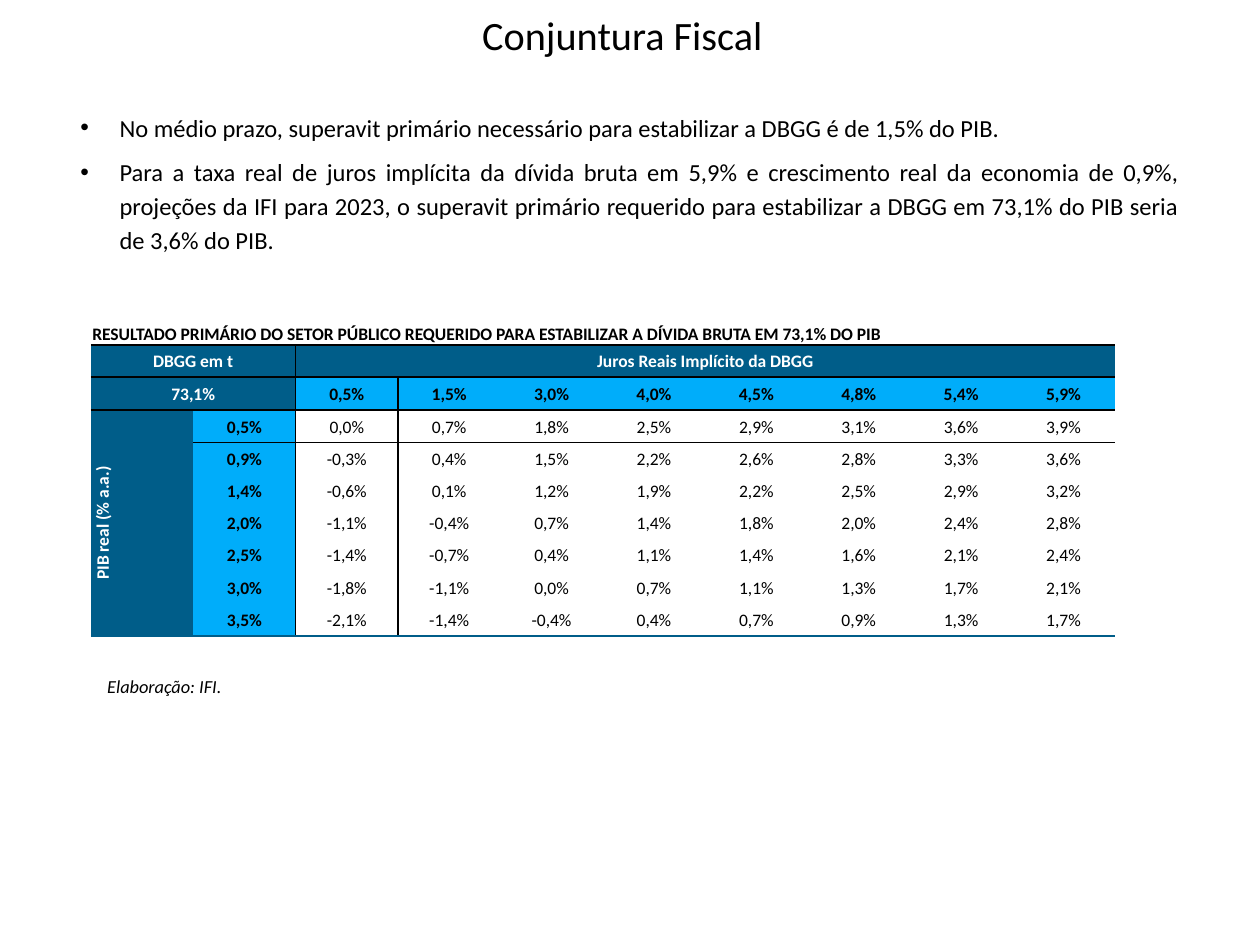
from lxml.etree import SubElement
from pptx import Presentation
from pptx.dml.color import RGBColor
from pptx.enum.text import MSO_ANCHOR, MSO_AUTO_SIZE, PP_ALIGN
from pptx.oxml.ns import qn
from pptx.util import Cm, Pt

BLACK, WHITE, NAVY, SKY = "000000", "FFFFFF", "005D89", "00ADFA"
NO_GRID_STYLE = "{2D5ABB26-0587-4C30-8999-92F81FD0307C}"
BULLETS = [
    "No médio prazo, superavit primário necessário para estabilizar a DBGG é de 1,5% do PIB.",
    "Para a taxa real de juros implícita da dívida bruta em 5,9% e crescimento real da economia "
    "de 0,9%, projeções da IFI para 2023, o superavit primário requerido para estabilizar a DBGG "
    "em 73,1% do PIB seria de 3,6% do PIB.",
]
TABLE_TITLE = (
    "RESULTADO PRIMÁRIO DO SETOR PÚBLICO REQUERIDO PARA ESTABILIZAR A DÍVIDA BRUTA EM 73,1% DO PIB"
)
INTEREST_RATES = "0,5% 1,5% 3,0% 4,0% 4,5% 4,8% 5,4% 5,9%".split()
PRIMARY_RESULTS = {
    "0,5%": "0,0% 0,7% 1,8% 2,5% 2,9% 3,1% 3,6% 3,9%",
    "0,9%": "-0,3% 0,4% 1,5% 2,2% 2,6% 2,8% 3,3% 3,6%",
    "1,4%": "-0,6% 0,1% 1,2% 1,9% 2,2% 2,5% 2,9% 3,2%",
    "2,0%": "-1,1% -0,4% 0,7% 1,4% 1,8% 2,0% 2,4% 2,8%",
    "2,5%": "-1,4% -0,7% 0,4% 1,1% 1,4% 1,6% 2,1% 2,4%",
    "3,0%": "-1,8% -1,1% 0,0% 0,7% 1,1% 1,3% 1,7% 2,1%",
    "3,5%": "-2,1% -1,4% -0,4% 0,4% 0,7% 0,9% 1,3% 1,7%",
}
ROW_HEIGHTS = [0.69, 0.64, 0.67] + [0.65] * 7 + [0.69]
MERGES = [(0, 0, 0, 9), (1, 0, 1, 1), (1, 2, 1, 9), (2, 0, 2, 1), (3, 0, 9, 0)]
RULES_BELOW = {0: (BLACK, 1), 2: (BLACK, 1), 9: (NAVY, 1.5)}


def color(value):
    """Turn a hex string into a colour."""
    return RGBColor.from_string(value)


def apply(target, values):
    """Set every attribute in a dict of format values."""
    for name, value in values.items():
        setattr(target, name, value)


def cell_colors(row, column):
    """Return the fill and text colour for a table position."""
    if row in (0, 10):
        return WHITE, BLACK
    if row == 1 or column == 0 or (row == 2 and column == 1):
        return NAVY, WHITE
    if row == 2 or column == 1:
        return SKY, BLACK
    return WHITE, BLACK


def cell_borders(cell, row, column):
    """Return the visible borders of a cell by side."""
    last_row = row + cell.span_height - 1
    last_column = column + cell.span_width - 1
    inside = 1 <= row <= 9
    borders = {
        "L": (BLACK, 1) if inside and column == 2 else None,
        "R": (BLACK, 1) if inside and last_column == 1 else None,
        "T": RULES_BELOW.get(row - 1),
        "B": RULES_BELOW.get(last_row),
    }
    return {side: border for side, border in borders.items() if border}


class SlideBuilder:
    """Holds the style and the current slide."""

    font_name = "Calibri"

    def __init__(self, presentation):
        """Add a title-only slide."""
        self.slide = presentation.slides.add_slide(presentation.slide_layouts[5])

    def text_run(self, paragraph, text, size, text_color=BLACK, bold=False, italic=False):
        """Add a formatted run to a paragraph."""
        run = paragraph.add_run()
        run.text = text
        apply(run.font, {"name": self.font_name, "size": Pt(size), "bold": bold, "italic": italic})
        run.font.color.rgb = color(text_color)

    def title(self, text, left, top, width, height):
        """Place and format the title."""
        shape = self.slide.shapes.title
        apply(shape, {"left": Cm(left), "top": Cm(top), "width": Cm(width), "height": Cm(height)})
        frame = shape.text_frame
        apply(frame, {"auto_size": MSO_AUTO_SIZE.NONE, "vertical_anchor": MSO_ANCHOR.MIDDLE})
        paragraph = frame.paragraphs[0]
        apply(paragraph, {"alignment": PP_ALIGN.CENTER, "line_spacing": 0.9})
        self.text_run(paragraph, text, 23)

    def text_box(self, left, top, width, height, wrap):
        """Add a text box and return its frame."""
        shape = self.slide.shapes.add_textbox(Cm(left), Cm(top), Cm(width), Cm(height))
        apply(shape.text_frame, {"word_wrap": wrap, "auto_size": MSO_AUTO_SIZE.SHAPE_TO_FIT_TEXT})
        return shape.text_frame

    def bullets(self, texts, left, top, width, height):
        """Add a justified bullet list."""
        frame = self.text_box(left, top, width, height, True)
        for index, text in enumerate(texts):
            paragraph = frame.add_paragraph() if index else frame.paragraphs[0]
            properties = paragraph._p.get_or_add_pPr()
            apply(paragraph, {
                "alignment": PP_ALIGN.JUSTIFY, "line_spacing": 1.15, "space_after": Pt(6),
            })
            properties.set("marL", str(Cm(0.79)))
            properties.set("indent", str(-Cm(0.79)))
            SubElement(properties, qn("a:buFont"), typeface="Arial")
            SubElement(properties, qn("a:buChar"), char="•")
            self.text_run(paragraph, text, 14)

    def caption(self, text, left, top, width, height):
        """Add an italic source line."""
        paragraph = self.text_box(left, top, width, height, False).paragraphs[0]
        paragraph.alignment = PP_ALIGN.CENTER
        self.text_run(paragraph, text, 10.5, italic=True)

    def border(self, cell, side, line_color, width):
        """Draw one side of a cell."""
        properties = cell._tc.get_or_add_tcPr()
        line = SubElement(properties, qn(f"a:ln{side}"), w=str(Pt(width)))
        SubElement(SubElement(line, qn("a:solidFill")), qn("a:srgbClr"), val=line_color)

    def cell(self, cell, text, row, column):
        """Fill in and format one cell."""
        apply(cell, {
            "margin_left": Cm(0.03), "margin_right": Cm(0.03), "margin_top": Cm(0.03),
            "margin_bottom": 0,
            "vertical_anchor": MSO_ANCHOR.MIDDLE if row else MSO_ANCHOR.BOTTOM,
        })
        for side, border in cell_borders(cell, row, column).items():
            self.border(cell, side, *border)
        fill_color, text_color = cell_colors(row, column)
        cell.fill.solid()
        cell.fill.fore_color.rgb = color(fill_color)
        paragraph = cell.text_frame.paragraphs[0]
        paragraph.alignment = PP_ALIGN.CENTER if row else PP_ALIGN.LEFT
        self.text_run(paragraph, text, 10, text_color, bold=row < 3 or column < 2)

    def table(self, texts, left, top, width):
        """Add the sensitivity table."""
        shape = self.slide.shapes.add_table(
            len(ROW_HEIGHTS), 10, Cm(left), Cm(top), Cm(width), Cm(sum(ROW_HEIGHTS))
        )
        table = shape.table
        apply(table, {"first_row": False, "horz_banding": False})
        table._tbl.tblPr.find(qn("a:tableStyleId")).text = NO_GRID_STYLE
        for table_row, height in zip(table.rows, ROW_HEIGHTS):
            table_row.height = Cm(height)
        for first_row, first_column, last_row, last_column in MERGES:
            table.cell(first_row, first_column).merge(table.cell(last_row, last_column))
        for row in range(len(ROW_HEIGHTS)):
            for column in range(10):
                self.cell(table.cell(row, column), texts.get((row, column), ""), row, column)
        table.cell(3, 0)._tc.get_or_add_tcPr().set("vert", "vert270")


def table_texts():
    """Map table positions to their texts."""
    texts = {
        (0, 0): TABLE_TITLE, (1, 0): "DBGG em t", (1, 2): "Juros Reais Implícito da DBGG",
        (2, 0): "73,1%", (3, 0): "PIB real (% a.a.)",
    }
    texts.update({(2, column): rate for column, rate in enumerate(INTEREST_RATES, 2)})
    for row, (growth, results) in enumerate(PRIMARY_RESULTS.items(), 3):
        for column, text in enumerate([growth] + results.split(), 1):
            texts[row, column] = text
    return texts


def main():
    """Build and save the presentation."""
    presentation = Presentation()
    apply(presentation, {"slide_width": Cm(25.4), "slide_height": Cm(19.05)})
    builder = SlideBuilder(presentation)
    builder.title("Conjuntura Fiscal", 7.52, 0, 10.06, 1.5)
    builder.bullets(BULLETS, 1.37, 2.06, 22.66, 3.23)
    builder.caption("Elaboração: IFI.", 1.83, 13.49, 2.97, 0.74)
    builder.table(table_texts(), 1.83, 6.27, 20.65)
    presentation.save("out.pptx")


if __name__ == "__main__":
    main()
